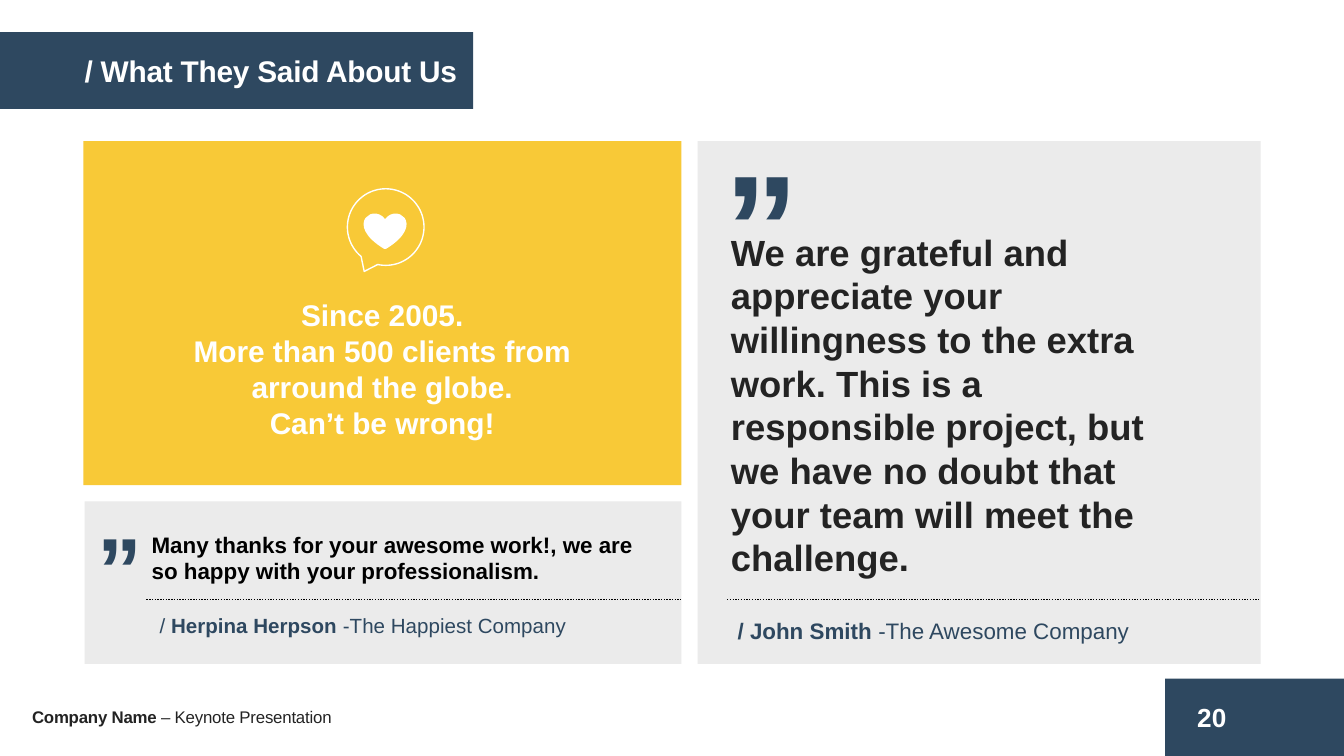
from dataclasses import dataclass
from math import cos, radians, sin

from lxml import etree
from pptx import Presentation
from pptx.dml.color import RGBColor
from pptx.enum.dml import MSO_LINE
from pptx.enum.shapes import MSO_CONNECTOR, MSO_SHAPE
from pptx.enum.text import MSO_ANCHOR, MSO_AUTO_SIZE, PP_ALIGN
from pptx.oxml.ns import qn
from pptx.util import Inches, Pt

RECTANGLE, HEART = MSO_SHAPE.RECTANGLE, MSO_SHAPE.HEART
LEFT, CENTER = PP_ALIGN.LEFT, PP_ALIGN.CENTER
FIT_SHAPE, TOP = MSO_AUTO_SIZE.SHAPE_TO_FIT_TEXT, MSO_ANCHOR.TOP
STRAIGHT, DOTTED = MSO_CONNECTOR.STRAIGHT, MSO_LINE.ROUND_DOT

FONT = "Arial"
NAVY, YELLOW, GREY = "2E4860", "F8C937", "EBEBEB"
WHITE, INK, BLACK = "FFFFFF", "232323", "000000"

Box = tuple[float, float, float, float]
Run = tuple[str, bool]


@dataclass
class Panel:
    box: Box
    color: str


@dataclass
class TextBlock:
    box: Box
    paragraphs: list[list[Run]]
    size: float
    color: str
    alignment: PP_ALIGN = LEFT
    spacing: float = 0


@dataclass
class Divider:
    start: float
    end: float
    y: float = 4.46


PANELS = [
    Panel((5.19, 1.05, 4.19, 3.89), GREY),
    Panel((0.63, 3.73, 4.44, 1.21), GREY),
    Panel((0.62, 1.05, 4.45, 2.56), YELLOW),
    Panel((8.67, 5.05, 1.33, 0.59), NAVY),
    Panel((0, 0.24, 3.52, 0.57), NAVY),
]

TITLE = TextBlock((0.53, 0.34, 3.62, 0.37), [[("/ What They Said About Us", True)]],
                  16, WHITE, spacing=-0.1)

TEXT_BLOCKS = [
    TextBlock((0.14, 5.21, 3.23, 0.25),
              [[("Company Name ", True), ("– Keynote Presentation", False)]],
              9, INK, spacing=-0.1),
    TextBlock((8.81, 5.17, 0.5, 0.34), [[("20", True)]], 14, WHITE),
    TextBlock((1.28, 2.16, 3.13, 1.21),
              [[("Since 2005.", True)],
               [("More than 500 clients from arround the globe.", True)],
               [("Can’t be wrong!", True)]],
              16, WHITE, CENTER),
    TextBlock((5.34, 1.66, 3.47, 2.73),
              [[("We are grateful and appreciate your willingness to the extra work. "
                 "This is a responsible project, but we have no doubt that your team "
                 "will meet the challenge.", True)]],
              19.5, INK),
    TextBlock((5.29, 0.93, 0.89, 1.45), [[("”", True)]], 80, NAVY),
    TextBlock((1.03, 3.9, 3.84, 0.5),
              [[("Many thanks for your awesome work!, we are so happy with your "
                 "professionalism.", True)]],
              12, BLACK),
    TextBlock((0.63, 3.76, 0.89, 0.91), [[("”", True)]], 48, NAVY),
    TextBlock((1.09, 4.51, 3.66, 0.29),
              [[("/ ", False), ("Herpina Herpson ", True),
                ("-The Happiest Company", False)]],
              11, NAVY),
    TextBlock((5.39, 4.54, 3.66, 0.3),
              [[("/ John Smith ", True), ("-The Awesome Company", False)]],
              12, NAVY),
]

DIVIDERS = [Divider(1.09, 5.07), Divider(5.41, 9.38)]


def rgb(color: str) -> RGBColor:
    return RGBColor.from_string(color)


def set_line(shape, color: str, width: float) -> None:
    shape.line.color.rgb = rgb(color)
    shape.line.width = Pt(width)


def add_filled_shape(slide, kind: MSO_SHAPE, box: Box, color: str):
    shape = slide.shapes.add_shape(kind, *map(Inches, box))
    shape.shadow.inherit = False
    shape.fill.solid()
    shape.fill.fore_color.rgb = rgb(color)
    shape.line.fill.background()
    return shape


def add_speech_bubble(slide) -> None:
    """Outline a circle whose lower left opens into a pointed tail."""
    center_x, center_y, radius = Inches(2.87), Inches(1.69), Inches(0.57) / 2
    points = [(round(center_x + radius * cos(radians(angle))),
               round(center_y + radius * sin(radians(angle))))
              for angle in range(130, 463, 4)]
    points.append((Inches(2.71), Inches(2.02)))
    builder = slide.shapes.build_freeform(*points[0])
    builder.add_line_segments(points[1:], close=True)
    bubble = builder.convert_to_shape()
    bubble.shadow.inherit = False
    bubble.fill.background()
    set_line(bubble, WHITE, 0.75)


def write_text(shape, block: TextBlock) -> None:
    frame = shape.text_frame
    frame_format = {"word_wrap": True, "auto_size": FIT_SHAPE, "vertical_anchor": TOP}
    for name, value in frame_format.items():
        setattr(frame, name, value)
    for index, runs in enumerate(block.paragraphs):
        paragraph = frame.add_paragraph() if index else frame.paragraphs[0]
        paragraph.alignment = block.alignment
        for text, bold in runs:
            run = paragraph.add_run()
            run.text = text
            font_format = {"name": FONT, "size": Pt(block.size), "bold": bold}
            for name, value in font_format.items():
                setattr(run.font, name, value)
            run.font.color.rgb = rgb(block.color)
            if block.spacing:
                run._r.get_or_add_rPr().set("spc", str(round(block.spacing * 100)))


def place_title(slide, block: TextBlock) -> None:
    title = slide.shapes.title
    for name, value in zip(("left", "top", "width", "height"), block.box):
        setattr(title, name, Inches(value))
    write_text(title, block)


def add_text_block(slide, block: TextBlock) -> None:
    write_text(slide.shapes.add_textbox(*map(Inches, block.box)), block)


def add_divider(slide, divider: Divider) -> None:
    connector = slide.shapes.add_connector(
        STRAIGHT, *map(Inches, (divider.start, divider.y, divider.end, divider.y)))
    set_line(connector, BLACK, 0.75)
    connector.line.dash_style = DOTTED
    etree.SubElement(connector.element.spPr, qn("a:effectLst"))


def main() -> None:
    presentation = Presentation()
    presentation.slide_width = Inches(10)
    presentation.slide_height = Inches(10) * 9 // 16
    slide = presentation.slides.add_slide(presentation.slide_layouts[5])

    for panel in PANELS:
        title_bar = add_filled_shape(slide, RECTANGLE, panel.box, panel.color)
    place_title(slide, TITLE)
    title_bar.element.addnext(slide.shapes.title.element)

    heart = add_filled_shape(slide, HEART, (2.72, 1.6, 0.29, 0.24), WHITE)
    set_line(heart, WHITE, 2)
    add_speech_bubble(slide)

    for block in TEXT_BLOCKS:
        add_text_block(slide, block)
    for divider in DIVIDERS:
        add_divider(slide, divider)

    presentation.save("out.pptx")


if __name__ == "__main__":
    main()
